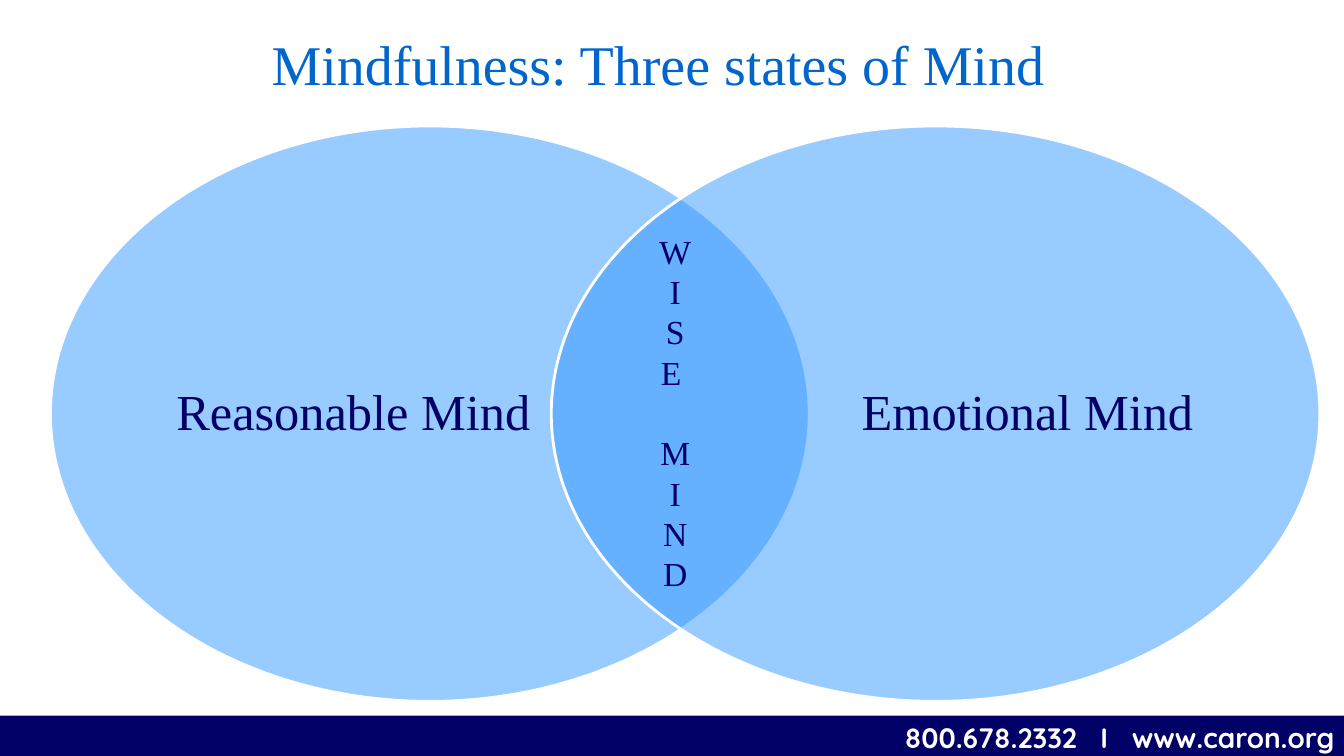
from lxml import etree
from pptx import Presentation
from pptx.dml.color import RGBColor
from pptx.enum.shapes import MSO_SHAPE
from pptx.enum.text import MSO_ANCHOR, PP_ALIGN
from pptx.oxml.ns import qn
from pptx.util import Pt

LEFT, CENTER, RIGHT = PP_ALIGN.LEFT, PP_ALIGN.CENTER, PP_ALIGN.RIGHT
MIDDLE, TOP = MSO_ANCHOR.MIDDLE, MSO_ANCHOR.TOP
RECTANGLE, OVAL = MSO_SHAPE.RECTANGLE, MSO_SHAPE.OVAL
SERIF = "Times New Roman"
NAVY, BLUE, SKY, WHITE = "000066", "0066CC", "3399FF", "FFFFFF"


def color(hex_string):
    return RGBColor.from_string(hex_string)


def format_text(frame, size, hex_string, align, anchor, font=SERIF, bold=False):
    frame.word_wrap = True
    frame.vertical_anchor = anchor
    for paragraph in frame.paragraphs:
        paragraph.alignment = align
        for run in paragraph.runs:
            run.font.name = font
            run.font.size = Pt(size)
            run.font.bold = bold
            run.font.color.rgb = color(hex_string)


prs = Presentation()
prs.slide_width, prs.slide_height = Pt(960), Pt(540)
slide = prs.slides.add_slide(prs.slide_layouts[5])
shapes = slide.shapes

footer = shapes.add_shape(RECTANGLE, Pt(0), Pt(511.2), Pt(960), Pt(31))
footer.shadow.inherit = False
footer.fill.solid()
footer.fill.fore_color.rgb = color(NAVY)
footer.line.fill.background()
contact = footer.text_frame
contact.margin_left = Pt(646.4)
contact.margin_right = contact.margin_top = contact.margin_bottom = Pt(0)
contact.text = "800.678.2332\tI\twww.caron.org"
tab_stops = etree.SubElement(contact.paragraphs[0]._p.get_or_add_pPr(), qn("a:tabLst"))
for position in (139.5, 162):
    etree.SubElement(tab_stops, qn("a:tab"), pos=str(Pt(position)), algn="l")
format_text(contact, 20, WHITE, LEFT, MIDDLE, "Quicksand", True)

title = shapes.title
title.left, title.top, title.width, title.height = Pt(62), Pt(0), Pt(816), Pt(90)
title.text_frame.text = "Mindfulness: Three states of Mind"
format_text(title.text_frame, 40, BLUE, CENTER, MIDDLE)

minds = [
    ("Reasonable Mind", 36, 542, 115.2, 384, LEFT),
    ("Emotional Mind", 393.8, 549, 474.5, 388.8, RIGHT),
]
for name, oval_left, oval_width, label_left, label_width, align in minds:
    mind = shapes.add_shape(OVAL, Pt(oval_left), Pt(90), Pt(oval_width), Pt(411))
    mind.shadow.inherit = False
    mind.fill.solid()
    mind.fill.fore_color.rgb = color(SKY)
    sky = mind._element.spPr.find(qn("a:solidFill")).find(qn("a:srgbClr"))
    etree.SubElement(sky, qn("a:alpha"), val="50000")
    mind.line.color.rgb = color(WHITE)
    mind.line.width = Pt(2)

    label = shapes.add_textbox(Pt(label_left), Pt(150.5), Pt(label_width), Pt(291)).text_frame
    label.margin_left = label.margin_right = Pt(10.8)
    label.margin_top = label.margin_bottom = Pt(10.8)
    label.text = name
    label.paragraphs[0].line_spacing = 0.9
    format_text(label, 36, NAVY, align, MIDDLE)

LETTER_PITCH = Pt(28.8)
wise_mind = shapes.add_textbox(Pt(460.8), Pt(161.3), Pt(43.2), Pt(269.3)).text_frame
wise_mind.text = "\n".join(["W", "I", "S", "E ", "M", "I", "N", "D"])
for letter in wise_mind.paragraphs:
    letter.line_spacing = LETTER_PITCH
    if letter.text == "M":
        letter.space_before = LETTER_PITCH
format_text(wise_mind, 24, NAVY, CENTER, TOP)

prs.save("out.pptx")
